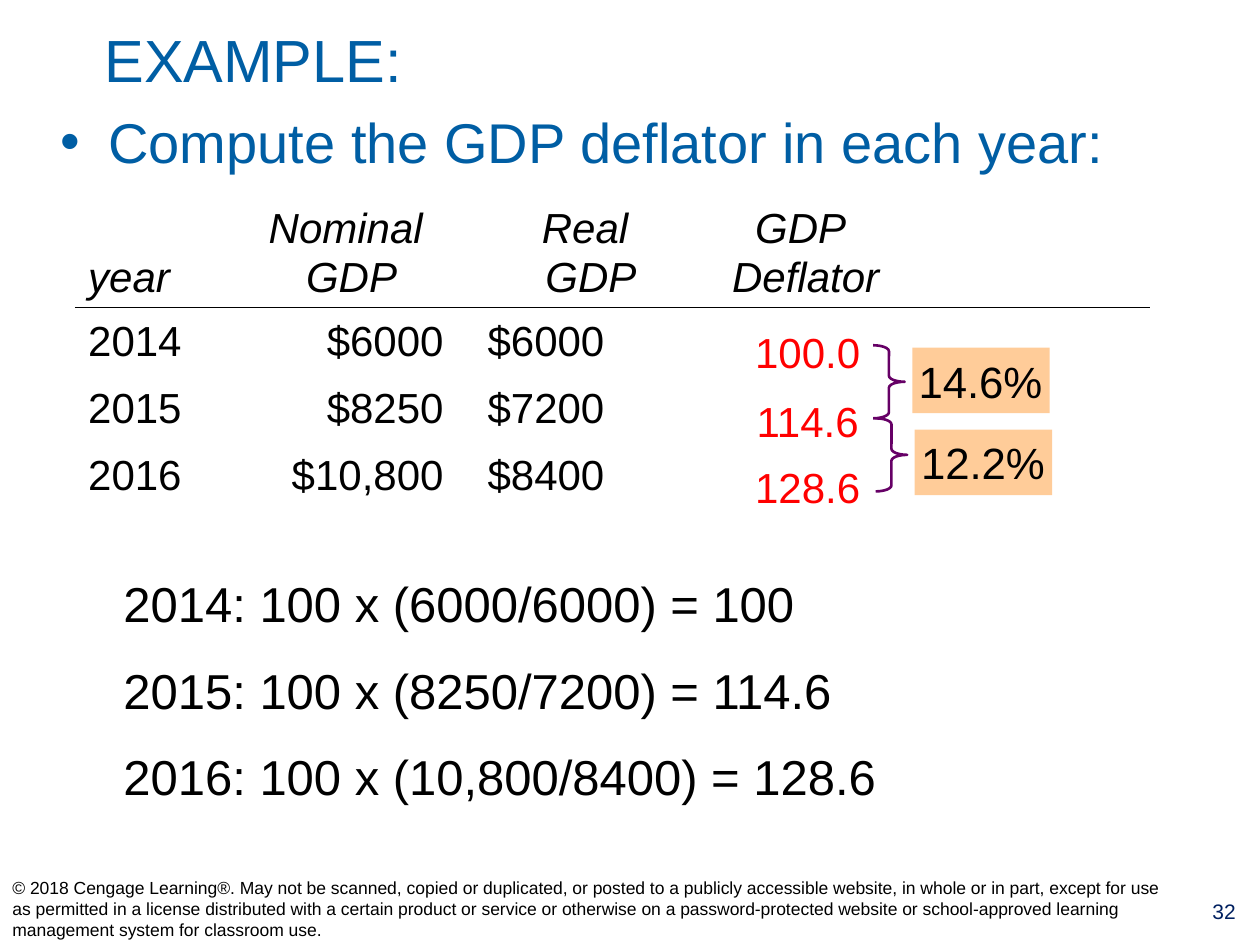
from lxml.etree import SubElement
from pptx import Presentation
from pptx.dml.color import RGBColor
from pptx.enum.shapes import MSO_SHAPE
from pptx.enum.text import MSO_ANCHOR, MSO_AUTO_SIZE, PP_ALIGN
from pptx.oxml.ns import qn
from pptx.util import Inches, Pt

TITLE = "EXAMPLE:"
PROMPT = "Compute the GDP deflator in each year:"
EQUATIONS = [
    "2014: 100 x (6000/6000) = 100",
    "2015: 100 x (8250/7200) = 114.6",
    "2016: 100 x (10,800/8400) = 128.6",
]
TABLE = [
    ["year", "Nominal \vGDP", "Real \vGDP", "GDP \vDeflator", ""],
    ["2014", "$6000", "$6000", "", ""],
    ["2015", "$8250", "$7200", "", ""],
    ["2016", "$10,800", "$8400", "", ""],
]
DEFLATORS = [("100.0", 2.54), ("114.6", 3.09), ("128.6", 3.61)]
GROWTH = [("14.6%", 6.93, 2.74), ("12.2%", 6.95, 3.32)]
GROWTH_TOPS = [2.76, 3.41]
PAGE_NUMBER = "32"
COPYRIGHT = (
    "© 2018 Cengage Learning®. May not be scanned, copied or duplicated, or posted to a "
    "publicly accessible website, in whole or in part, except for use as permitted in a "
    "license distributed with a certain product or service or otherwise on a "
    "password-protected website or school-approved learning management system for "
    "classroom use."
)
COLUMN_WIDTHS = [1.21, 1.96, 1.84, 1.57, 1.94]
ROW_HEIGHTS = [0.87, 0.53, 0.53, 0.53]
COLORS = {
    "blue": "005EA4",
    "navy": "002060",
    "black": "000000",
    "red": "FF0000",
    "peach": "FFCC99",
    "purple": "660066",
}


def color(name):
    return RGBColor.from_string(COLORS[name])


def style(para, size, name, align=PP_ALIGN.LEFT, italic=False):
    para.alignment = align
    for span in para.runs:
        span.font.name = "Arial"
        span.font.size = Pt(size)
        span.font.italic = italic
        span.font.color.rgb = color(name)


def place(shape, left, top, width, height):
    shape.left, shape.top = Inches(left), Inches(top)
    shape.width, shape.height = Inches(width), Inches(height)


def add_label(page, text, area, size, name, align, anchor=MSO_ANCHOR.MIDDLE):
    box = page.shapes.add_textbox(*map(Inches, area))
    frame = box.text_frame
    frame.word_wrap = True
    frame.vertical_anchor = anchor
    frame.text = text
    style(frame.paragraphs[0], size, name, align)
    return frame.paragraphs[0]


def add_title(page):
    title = page.shapes.title
    place(title, 0.73, 0.11, 8.53, 0.72)
    frame = title.text_frame
    frame.text = TITLE
    frame.auto_size = MSO_AUTO_SIZE.NONE
    frame.vertical_anchor = MSO_ANCHOR.MIDDLE
    style(frame.paragraphs[0], 34, "blue")


def add_body(page):
    body = page.placeholders[1]
    place(body, 0.38, 0.8, 9.32, 6.1)
    frame = body.text_frame
    frame.text = "\n".join([PROMPT, *EQUATIONS])
    frame.auto_size = MSO_AUTO_SIZE.NONE
    prompt, *equations = frame.paragraphs
    prompt.space_before = Pt(0)
    properties = prompt._p.get_or_add_pPr()
    properties.set("marL", str(Inches(0.38)))
    properties.set("indent", str(-Inches(0.38)))
    SubElement(properties, qn("a:buChar"), char="•")
    style(prompt, 32, "blue")
    for index, para in enumerate(equations):
        para.level = 1
        properties = para._p.get_or_add_pPr()
        properties.set("marL", str(Inches(0.5)))
        properties.set("indent", "0")
        SubElement(properties, qn("a:buNone"))
        para.space_before = Pt(16 if index else 228)
        style(para, 28, "black")


def add_border(cell, side):
    line = SubElement(cell._tc.get_or_add_tcPr(), qn(f"a:{side}"), w=str(Pt(1)))
    fill = SubElement(line, qn("a:solidFill"))
    SubElement(fill, qn("a:srgbClr"), val=COLORS["black"])


def add_gdp_table(page):
    area = (0.6, 1.5, sum(COLUMN_WIDTHS), sum(ROW_HEIGHTS))
    table = page.shapes.add_table(
        len(TABLE), len(COLUMN_WIDTHS), *map(Inches, area)
    ).table
    table.first_row = table.horz_banding = False
    for column, width in zip(table.columns, COLUMN_WIDTHS):
        column.width = Inches(width)
    for row, height in zip(table.rows, ROW_HEIGHTS):
        row.height = Inches(height)
    for r, values in enumerate(TABLE):
        for c, value in enumerate(values):
            cell = table.cell(r, c)
            cell.text = value
            cell.vertical_anchor = MSO_ANCHOR.MIDDLE if r else MSO_ANCHOR.BOTTOM
            align = PP_ALIGN.LEFT
            if r == 0 and c > 0:
                align = PP_ALIGN.CENTER
            elif c == 1:
                align = PP_ALIGN.RIGHT
                cell.margin_right = Inches(0.25)
            para = cell.text_frame.paragraphs[0]
            para.line_spacing = 1.05
            style(para, 24, "black", align, italic=r == 0)
            if r < 2:
                add_border(cell, "lnT" if r else "lnB")
            cell.fill.background()


def add_growth(page, text, brace_left, brace_top, box_top):
    area = (brace_left + 0.31, box_top, 1.09, 0.52)
    box = page.shapes.add_shape(MSO_SHAPE.RECTANGLE, *map(Inches, area))
    box.shadow.inherit = False
    box.fill.solid()
    box.fill.fore_color.rgb = color("peach")
    box.line.fill.background()
    frame = box.text_frame
    frame.margin_left = frame.margin_right = Inches(0.05)
    frame.word_wrap = False
    frame.vertical_anchor = MSO_ANCHOR.MIDDLE
    frame.text = text
    style(frame.paragraphs[0], 25, "black")
    area = (brace_left, brace_top, 0.25, 0.58)
    brace = page.shapes.add_shape(MSO_SHAPE.RIGHT_BRACE, *map(Inches, area))
    brace.shadow.inherit = False
    brace.adjustments[0] = 0.19
    brace.fill.background()
    brace.line.color.rgb = color("purple")
    brace.line.width = Pt(1.5)


def main():
    deck = Presentation()
    deck.slide_width, deck.slide_height = Inches(10), Inches(7.5)
    page = deck.slides.add_slide(deck.slide_layouts[1])
    add_title(page)
    add_body(page)
    add_label(page, PAGE_NUMBER, (9.43, 7.08, 0.57, 0.41), 12, "navy",
              PP_ALIGN.CENTER, MSO_ANCHOR.TOP)
    add_label(page, COPYRIGHT, (0, 6.92, 9.41, 0.58), 10, "black", PP_ALIGN.LEFT)
    add_gdp_table(page)
    for value, top in DEFLATORS:
        para = add_label(page, value, (5.8, top, 1.22, 0.48), 24, "red", PP_ALIGN.CENTER)
        para.line_spacing = 1.05
    for growth, box_top in zip(GROWTH, GROWTH_TOPS):
        add_growth(page, *growth, box_top)
    deck.save("out.pptx")


if __name__ == "__main__":
    main()
